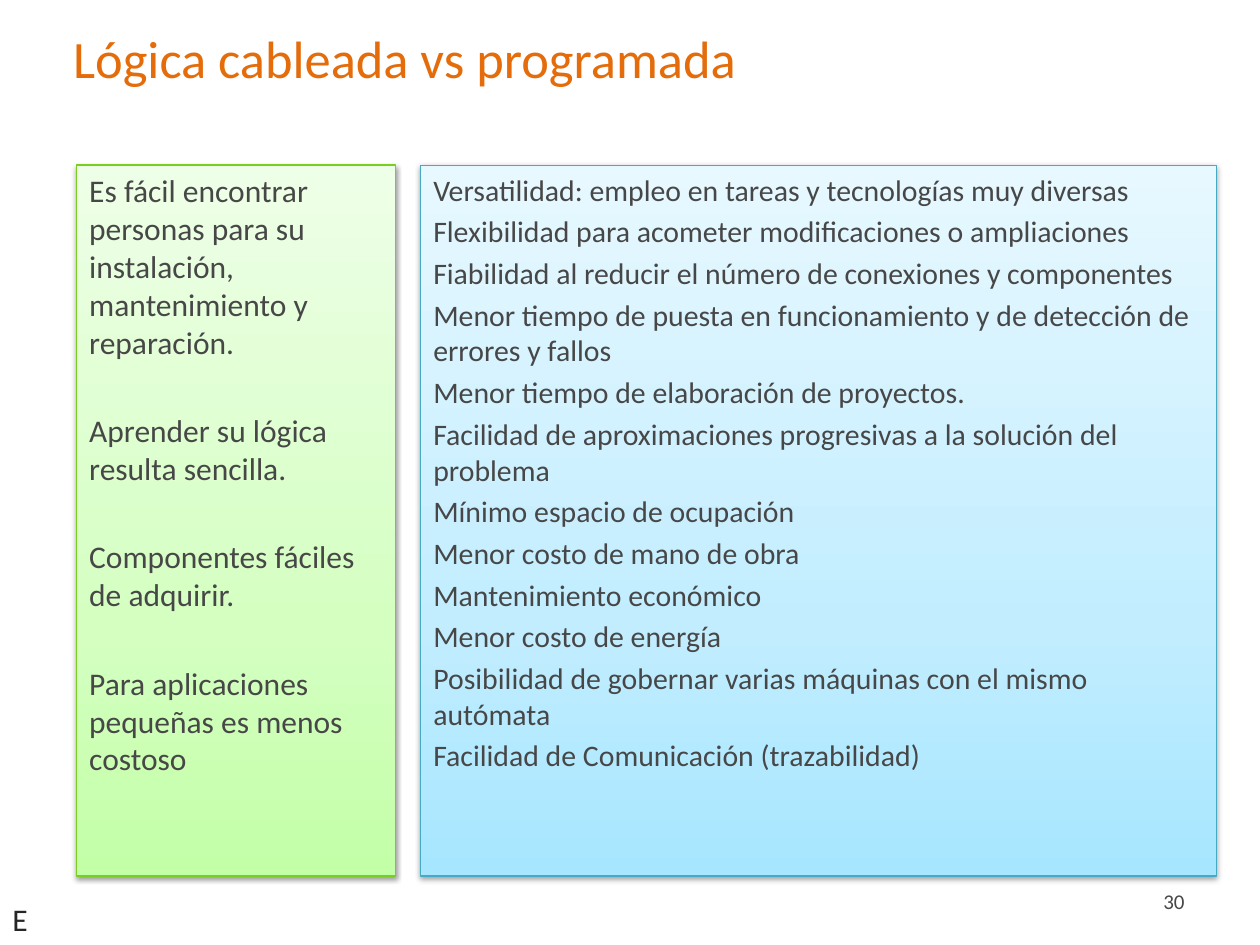
import pptx
import pptx.util
import pptx.dml.color
import pptx.enum.shapes
import pptx.enum.text
import pptx.oxml
import pptx.oxml.ns
from pptx.util import Cm, Pt

TITLE = "Lógica cableada vs programada"
WIRED = [
    "Es fácil encontrar personas para su instalación, mantenimiento y reparación.",
    "Aprender su lógica resulta sencilla.",
    "Componentes fáciles de adquirir.",
    "Para aplicaciones pequeñas es menos costoso",
]
CODED = [
    "Versatilidad: empleo en tareas y tecnologías muy diversas",
    "Flexibilidad para acometer modificaciones o ampliaciones",
    "Fiabilidad al reducir el número de conexiones y componentes",
    "Menor tiempo de puesta en funcionamiento y de detección de errores y fallos",
    "Menor tiempo de elaboración de proyectos.",
    "Facilidad de aproximaciones progresivas a la solución del problema",
    "Mínimo espacio de ocupación",
    "Menor costo de mano de obra",
    "Mantenimiento económico",
    "Menor costo de energía",
    "Posibilidad de gobernar varias máquinas con el mismo autómata",
    "Facilidad de Comunicación (trazabilidad)",
]
GREEN = {"stops": [(0, "C3FFA7"), (35, "D4FFC1"), (100, "EEFFE7")], "edge": "78CF22"}
BLUE = {"stops": [(0, "A7E6FF"), (35, "C1EDFF"), (100, "E7F8FF")], "edge": "46AAC5"}
GREY = "474747"
TOP, HIGH = 3.33, 14.33

ALIGN = pptx.enum.text.PP_ALIGN
ANCHOR = pptx.enum.text.MSO_ANCHOR


def rgb(code):
    return pptx.dml.color.RGBColor.from_string(code)


def place(shape, left, top, width, height):
    shape.left, shape.top = Cm(left), Cm(top)
    shape.width, shape.height = Cm(width), Cm(height)


def write(shape, lines, size=18, color=GREY, align=ALIGN.LEFT,
          anchor=ANCHOR.TOP, gap=0, wrap=True):
    """Fill a shape with unbulleted paragraphs, gap points apart."""
    frame = shape.text_frame
    frame.text = "\n".join(lines)
    frame.auto_size = pptx.enum.text.MSO_AUTO_SIZE.NONE
    frame.word_wrap, frame.vertical_anchor = wrap, anchor
    for i, para in enumerate(frame.paragraphs):
        para.alignment = align
        para.space_before = Pt(gap if i else 0)
        props = para._p.get_or_add_pPr()
        props.set("marL", "0")
        props.set("indent", "0")
        pptx.oxml.ns.qn("a:buNone")
        props.append(pptx.oxml.parse_xml(
            f'<a:buNone {pptx.oxml.ns.nsdecls("a")}/>'))
        font = para.font
        for run in para.runs:
            font = run.font
            font.name, font.size = "Calibri", Pt(size)
            font.color.rgb = rgb(color)


def paint(shape, stops, edge):
    """Give a panel an upward gradient, a thin edge and a soft shadow."""
    names = pptx.oxml.ns.nsdecls("a")
    shape.fill.gradient()
    shape.fill.gradient_angle = 90
    props = shape._element.spPr
    marks = props.find(".//" + pptx.oxml.ns.qn("a:gsLst"))
    for mark in list(marks):
        marks.remove(mark)
    for pos, code in stops:
        marks.append(pptx.oxml.parse_xml(
            f'<a:gs {names} pos="{pos * 1000}"><a:srgbClr val="{code}"/></a:gs>'))
    shape.line.color.rgb = rgb(edge)
    shape.line.width = Pt(0.75)
    shape.shadow.inherit = False
    props.find(pptx.oxml.ns.qn("a:effectLst")).append(pptx.oxml.parse_xml(
        f'<a:outerShdw {names} blurRad="{Pt(3.1)}" dist="{Pt(1.6)}" dir="5400000"'
        ' rotWithShape="0"><a:srgbClr val="000000"><a:alpha val="38000"/>'
        '</a:srgbClr></a:outerShdw>'))


def main():
    deck = pptx.Presentation()
    deck.slide_width, deck.slide_height = Cm(25.4), Cm(19.05)
    slide = deck.slides.add_slide(deck.slide_layouts[1])
    shapes = slide.shapes

    title = shapes.title
    place(title, 1.22, 0.2, 23.34, 1.9)
    write(title, [TITLE], size=30, color="E46C0A", anchor=ANCHOR.MIDDLE)

    coded = slide.placeholders[1]
    place(coded, 8.48, TOP, 16.05, HIGH)
    paint(coded, **BLUE)
    write(coded, CODED, size=17, gap=3.4)

    number = shapes.add_textbox(Cm(18.21), Cm(17.65), Cm(5.92), Cm(1.02))
    write(number, ["30"], size=12, align=ALIGN.RIGHT, anchor=ANCHOR.MIDDLE)

    letter = shapes.add_textbox(Cm(0), Cm(18.01), Cm(0.86), Cm(1.02))
    write(letter, ["E"], color="262626", wrap=False)

    wired = shapes.add_shape(pptx.enum.shapes.MSO_SHAPE.RECTANGLE,
                             Cm(1.55), Cm(TOP), Cm(6.43), Cm(HIGH))
    paint(wired, **GREEN)
    write(wired, WIRED, gap=29)

    deck.save("out.pptx")


if __name__ == "__main__":
    main()
